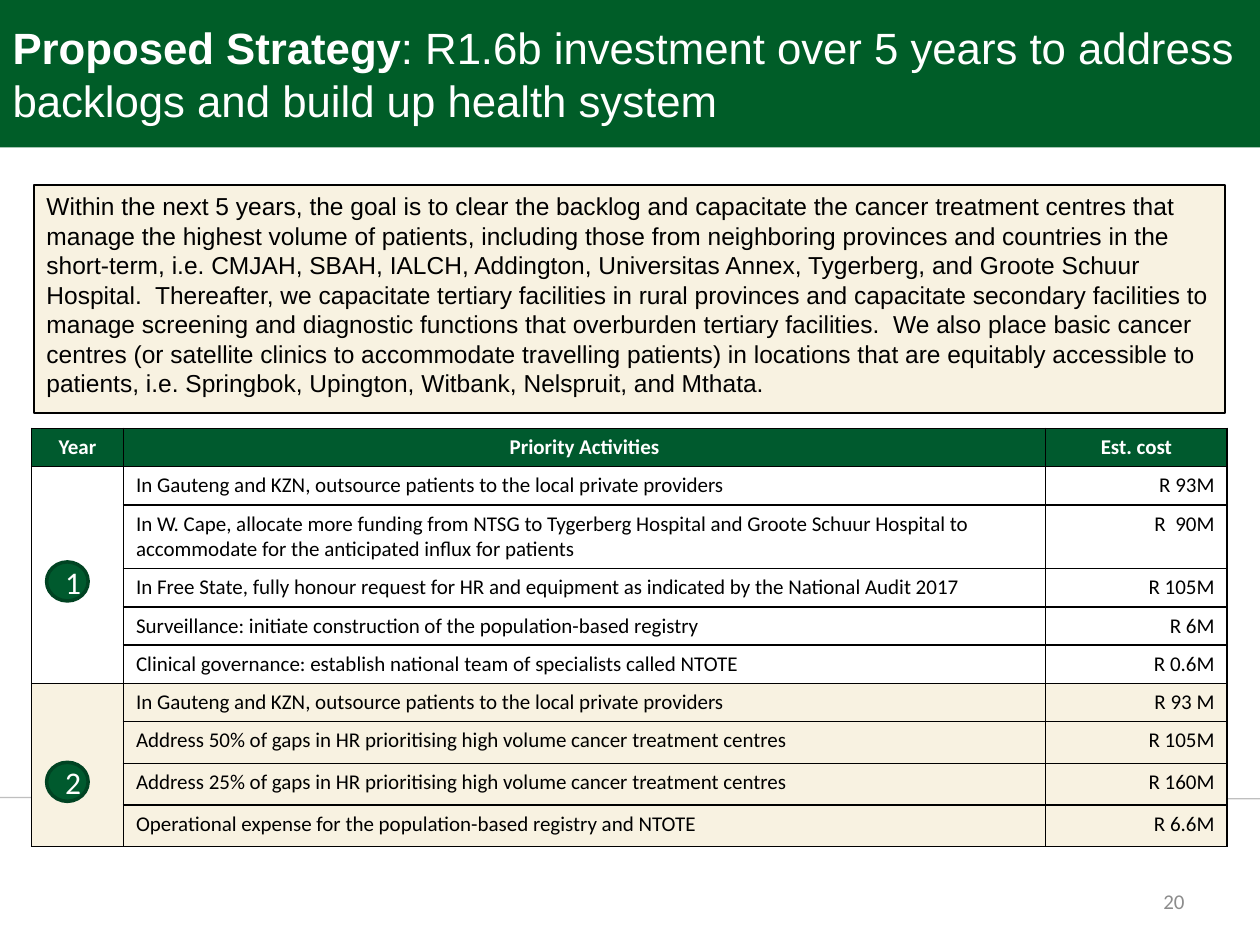
from lxml import etree
from pptx import Presentation
from pptx.dml.color import RGBColor
from pptx.enum import shapes, text
from pptx.oxml import ns
from pptx.util import Inches, Pt

TITLE_GREEN = RGBColor(0x00, 0x5D, 0x28)
GREEN = RGBColor(0x00, 0x5A, 0x2E)
DARK_GREEN = RGBColor(0x00, 0x43, 0x22)
CREAM = RGBColor(0xF8, 0xF2, 0xE1)
WHITE = RGBColor(0xFF, 0xFF, 0xFF)
BLACK = RGBColor(0x00, 0x00, 0x00)
RULE_GREY = RGBColor(0xBF, 0xBF, 0xBF)
NUMBER_GREY = RGBColor(0x8C, 0x8C, 0x8C)

LEFT, CENTER, RIGHT = (text.PP_ALIGN.LEFT, text.PP_ALIGN.CENTER,
                       text.PP_ALIGN.RIGHT)

GOAL = (
    "Within the next 5 years, the goal is to clear the backlog and capacitate "
    "the cancer treatment centres that manage the highest volume of patients, "
    "including those from neighboring provinces and countries in the "
    "short-term, i.e. CMJAH, SBAH, IALCH, Addington, Universitas Annex, "
    "Tygerberg, and Groote Schuur Hospital.  Thereafter, we capacitate "
    "tertiary facilities in rural provinces and capacitate secondary "
    "facilities to manage screening and diagnostic functions that overburden "
    "tertiary facilities.  We also place basic cancer centres (or satellite "
    "clinics to accommodate travelling patients) in locations that are "
    "equitably accessible to patients, i.e. Springbok, Upington, Witbank, "
    "Nelspruit, and Mthata.")

HEADINGS = ("Year", "Priority Activities", "Est. cost")
OUTSOURCE = ("In Gauteng and KZN, outsource patients to the local private "
             "providers")
YEARS = [
    (WHITE, [
        (OUTSOURCE, "R 93M"),
        ("In W. Cape, allocate more funding from NTSG to Tygerberg Hospital "
         "and Groote Schuur Hospital to accommodate for the anticipated "
         "influx for patients", "R  90M"),
        ("In Free State, fully honour request for HR and equipment as "
         "indicated by the National Audit 2017", "R 105M"),
        ("Surveillance: initiate construction of the population-based "
         "registry", "R 6M"),
        ("Clinical governance: establish national team of specialists called "
         "NTOTE", "R 0.6M"),
    ]),
    (CREAM, [
        (OUTSOURCE, "R 93 M"),
        ("Address 50% of gaps in HR prioritising high volume cancer treatment "
         "centres", "R 105M"),
        ("Address 25% of gaps in HR prioritising high volume cancer treatment "
         "centres", "R 160M"),
        ("Operational expense for the population-based registry and NTOTE",
         "R 6.6M"),
    ]),
]
COLUMN_WIDTHS = (0.73, 7.32, 1.44)
ROW_HEIGHTS = [0.3] * 7 + [0.33] * 3


def style(paragraph, font_name, size, color, align=LEFT, bold=False):
    paragraph.alignment = align
    font = paragraph.font
    font.name, font.size, font.bold = font_name, Pt(size), bold
    font.color.rgb = color


def fill_solid(target, color):
    target.fill.solid()
    target.fill.fore_color.rgb = color


def add_filled_shape(slide, kind, box, fill, line, line_width):
    shape = slide.shapes.add_shape(kind, *map(Inches, box))
    shape.shadow.inherit = False
    fill_solid(shape, fill)
    shape.line.color.rgb = line
    shape.line.width = Pt(line_width)
    return shape


def add_footer_rule(slide, start, end):
    rule = slide.shapes.add_connector(
        shapes.MSO_CONNECTOR.STRAIGHT, *map(Inches, start + end))
    rule.line.color.rgb = RULE_GREY
    rule.line.width = Pt(0.75)
    etree.SubElement(rule._element.spPr, ns.qn("a:effectLst"))


def place_title(slide, box):
    title = slide.shapes.title
    title.left, title.top, title.width, title.height = map(Inches, box)
    fill_solid(title, TITLE_GREEN)
    frame = title.text_frame
    frame.auto_size = text.MSO_AUTO_SIZE.NONE
    frame.vertical_anchor = text.MSO_ANCHOR.MIDDLE
    heading = frame.paragraphs[0]
    style(heading, "Arial", 25, WHITE)
    lead = heading.add_run()
    lead.text = "Proposed Strategy"
    lead.font.bold = True
    heading.add_run().text = (": R1.6b investment over 5 years to address "
                              "backlogs and build up health system")


def add_goal(slide, box):
    goal = add_filled_shape(slide, shapes.MSO_SHAPE.RECTANGLE, box,
                            CREAM, BLACK, 1)
    frame = goal.text_frame
    frame.word_wrap = True
    frame.vertical_anchor = text.MSO_ANCHOR.TOP
    frame.text = GOAL
    style(frame.paragraphs[0], "Arial", 14, BLACK)


def border_cell(cell):
    properties = cell._tc.get_or_add_tcPr()
    for position, side in enumerate(("lnL", "lnR", "lnT", "lnB")):
        line = etree.Element(ns.qn(f"a:{side}"), w=str(Pt(1)))
        solid = etree.SubElement(line, ns.qn("a:solidFill"))
        etree.SubElement(solid, ns.qn("a:srgbClr"), val=str(BLACK))
        properties.insert(position, line)


def write_cell(cell, words, fill, color=BLACK, align=LEFT, bold=False):
    fill_solid(cell, fill)
    border_cell(cell)
    cell.text = words
    style(cell.text_frame.paragraphs[0], "Calibri", 12, color, align, bold)


def add_plan(slide, box):
    """Add the table of yearly activities and their costs."""
    plan = slide.shapes.add_table(
        len(ROW_HEIGHTS), len(COLUMN_WIDTHS), *map(Inches, box)).table
    for column, width in zip(plan.columns, COLUMN_WIDTHS):
        column.width = Inches(width)
    for row, height in zip(plan.rows, ROW_HEIGHTS):
        row.height = Inches(height)
    for column, heading in enumerate(HEADINGS):
        write_cell(plan.cell(0, column), heading, GREEN, WHITE, CENTER, True)
    first = 1
    for fill, activities in YEARS:
        for row, (activity, cost) in enumerate(activities, first):
            write_cell(plan.cell(row, 0), "", fill)
            write_cell(plan.cell(row, 1), activity, fill)
            write_cell(plan.cell(row, 2), cost, fill, align=RIGHT)
        last = first + len(activities) - 1
        plan.cell(first, 0).merge(plan.cell(last, 0))
        first = last + 1


def add_year_badge(slide, year, box):
    badge = add_filled_shape(slide, shapes.MSO_SHAPE.OVAL, box,
                             GREEN, DARK_GREEN, 2)
    frame = badge.text_frame
    frame.vertical_anchor = text.MSO_ANCHOR.MIDDLE
    frame.text = str(year)
    style(frame.paragraphs[0], "Calibri", 18, WHITE, CENTER)


def add_slide_number(slide, box):
    frame = slide.shapes.add_textbox(*map(Inches, box)).text_frame
    frame.word_wrap = True
    frame.vertical_anchor = text.MSO_ANCHOR.MIDDLE
    frame.text = "20"
    style(frame.paragraphs[0], "Calibri", 12, NUMBER_GREY, RIGHT)


def main():
    deck = Presentation()
    deck.slide_width, deck.slide_height = Inches(10), Inches(7.5)
    slide = deck.slides.add_slide(deck.slide_layouts[5])
    add_footer_rule(slide, (0, 6.33), (10, 6.34))
    place_title(slide, (0, 0, 10, 1.17))
    add_plan(slide, (0.25, 3.4, 9.5, 3.3))
    add_slide_number(slide, (7.17, 6.95, 2.33, 0.4))
    for year, top in enumerate((4.46, 6.05), 1):
        add_year_badge(slide, year, (0.37, top, 0.33, 0.31))
    add_goal(slide, (0.27, 1.47, 9.45, 1.81))
    deck.save("out.pptx")


if __name__ == "__main__":
    main()
